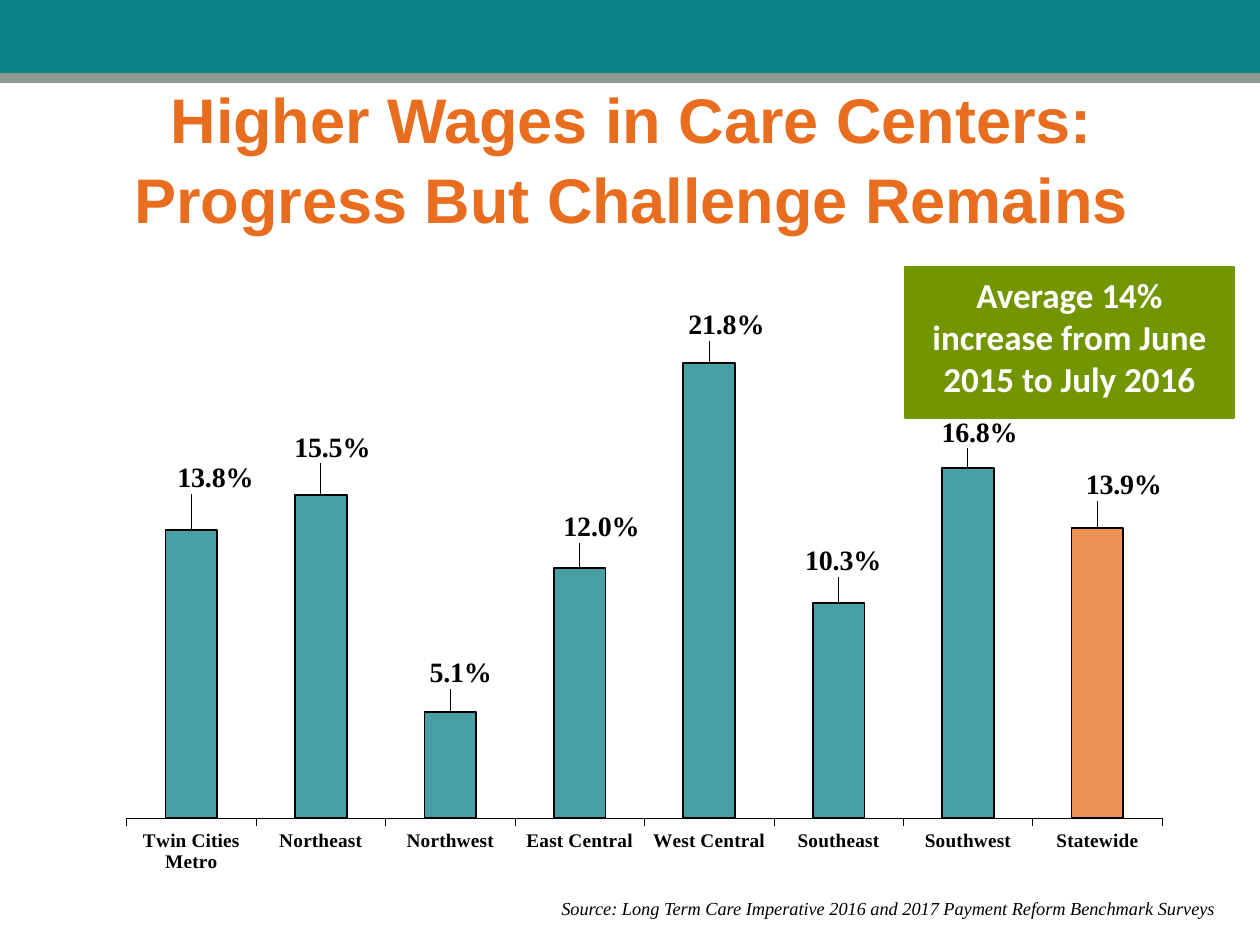
from lxml import etree
from pptx import Presentation
from pptx.chart.data import CategoryChartData
from pptx.dml.color import RGBColor
from pptx.enum.chart import XL_CHART_TYPE as ChartType
from pptx.enum.chart import XL_LABEL_POSITION as LabelPosition
from pptx.enum.chart import XL_TICK_LABEL_POSITION as TickLabelPosition
from pptx.enum.chart import XL_TICK_MARK as TickMark
from pptx.enum.shapes import MSO_SHAPE as Shape
from pptx.enum.text import MSO_ANCHOR as Anchor
from pptx.enum.text import MSO_AUTO_SIZE as AutoSize
from pptx.enum.text import PP_ALIGN as Align
from pptx.oxml.ns import qn
from pptx.util import Emu, Pt

PX_PER_INCH = 126
COLORS = {
    "teal": "0B8187",
    "gray": "8B9B92",
    "orange": "E86D1F",
    "green": "739600",
    "black": "000000",
    "white": "FFFFFF",
}
SERIF = "Times New Roman"
WAGE_INCREASES = {
    "Twin Cities Metro": 0.138,
    "Northeast": 0.155,
    "Northwest": 0.051,
    "East Central": 0.12,
    "West Central": 0.218,
    "Southeast": 0.103,
    "Southwest": 0.168,
    "Statewide": 0.139,
}
LABEL_OFFSETS = [(24, -31), (12, -26), (10, -18), (22, -20),
                 (17, -17), (5, -21), (11, -14), (26, -22)]


def px(length):
    """Turn pixels into EMU."""
    return Emu(round(length * 914400 / PX_PER_INCH))


def color(name):
    """Look up a named colour."""
    return RGBColor.from_string(COLORS[name])


def style_font(font, size, name=SERIF, fill="black", bold=False, italic=False):
    """Apply the given format to a font."""
    font.size, font.name = Pt(size), name
    font.bold, font.italic = bold, italic
    font.color.rgb = color(fill)


def write_text(frame, text, align=Align.LEFT, spacing=None, **font_format):
    """Write one formatted paragraph into a text frame."""
    paragraph = frame.paragraphs[0]
    paragraph.alignment = align
    paragraph.line_spacing = spacing
    run = paragraph.add_run()
    run.text = text
    style_font(run.font, **font_format)


def add_rectangle(slide, box, fill):
    """Add a plain filled rectangle."""
    shape = slide.shapes.add_shape(Shape.RECTANGLE, *map(px, box))
    shape.shadow.inherit = False
    shape.fill.solid()
    shape.fill.fore_color.rgb = color(fill)
    shape.line.fill.background()
    return shape


def add_header(slide, box):
    """Place the teal band with its gray strip below."""
    left, top, width, height = box
    strip = 10
    add_rectangle(slide, (left, top, width, height - strip), "teal")
    add_rectangle(slide, (left, top + height - strip, width, strip), "gray")


def place_title(slide, box, text):
    """Move and fill the title placeholder."""
    title = slide.shapes.title
    title.left, title.top, title.width, title.height = map(px, box)
    frame = title.text_frame
    frame.word_wrap = True
    frame.auto_size = AutoSize.NONE
    frame.vertical_anchor = Anchor.MIDDLE
    write_text(frame, text, align=Align.CENTER, spacing=1.05,
               size=36, name="Arial", fill="orange", bold=True)


def add_layout(parent, index, **values):
    """Insert a manual chart layout with the given settings."""
    layout = etree.Element(qn("c:layout"))
    manual = etree.SubElement(layout, qn("c:manualLayout"))
    for tag, value in values.items():
        etree.SubElement(manual, qn(f"c:{tag}")).set("val", str(value))
    parent.insert(index, layout)


def paint_bar(bar_format, fill):
    """Give bars a translucent fill and a black outline."""
    bar_format.fill.solid()
    bar_format.fill.fore_color.rgb = color(fill)
    for shade in bar_format.fill._xPr.iter(qn("a:srgbClr")):
        etree.SubElement(shade, qn("a:alpha")).set("val", "75000")
    bar_format.line.color.rgb = color("black")
    bar_format.line.width = Pt(1)


def add_wage_chart(slide, box):
    """Place the column chart of wage increases by region."""
    data = CategoryChartData(number_format="0.0%")
    data.categories = list(WAGE_INCREASES)
    data.add_series("Series 1", list(WAGE_INCREASES.values()))
    chart = slide.shapes.add_chart(
        ChartType.COLUMN_CLUSTERED, *map(px, box), data).chart
    chart.has_legend = chart.has_title = False
    style_font(chart.font, 18, bold=True)

    value_axis = chart.value_axis
    value_axis.minimum_scale, value_axis.maximum_scale = 0, 0.25
    value_axis.major_unit = 0.05
    value_axis.has_major_gridlines = False
    value_axis.visible = False

    category_axis = chart.category_axis
    category_axis.major_tick_mark = TickMark.OUTSIDE
    category_axis.tick_label_position = TickLabelPosition.LOW
    category_axis.format.line.color.rgb = color("black")
    category_axis.format.line.width = Pt(0.25)
    style_font(category_axis.tick_labels.font, 11, bold=True)

    plot = chart.plots[0]
    plot.gap_width = 150
    plot.vary_by_categories = False
    series = plot.series[0]
    paint_bar(series.format, "teal")
    paint_bar(series.points[len(WAGE_INCREASES) - 1].format, "orange")

    labels = series.data_labels
    labels.show_value = True
    labels.number_format, labels.number_format_is_linked = "0.0%", False
    style_font(labels.font, 16, bold=True)
    for index, (right, down) in enumerate(LABEL_OFFSETS):
        label = series.points[index].data_label
        style_font(label.font, 16, bold=True)
        label.position = LabelPosition.OUTSIDE_END
        element = labels._element.find(f"{qn('c:dLbl')}[{index + 1}]")
        add_layout(element, 1, x=round(right / box[2], 3), y=round(down / box[3], 3))

    plot_area = chart._chartSpace.chart.plotArea
    for old_layout in plot_area.findall(qn("c:layout")):
        plot_area.remove(old_layout)
    add_layout(plot_area, 0, layoutTarget="inner", xMode="edge", yMode="edge",
               x=0.082, y=0.026, w=0.906, h=0.822)


def add_source(slide, box, text):
    """Place the source line on one unwrapped line."""
    frame = slide.shapes.add_textbox(*map(px, box)).text_frame
    frame.word_wrap = False
    frame.auto_size = AutoSize.SHAPE_TO_FIT_TEXT
    write_text(frame, text, size=10.5, italic=True)


def add_callout(slide, box, text):
    """Place the green callout."""
    shape = add_rectangle(slide, box, "green")
    shape.line.color.rgb = color("green")
    shape.line.width = Pt(0.75)
    frame = shape.text_frame
    frame.word_wrap = True
    frame.vertical_anchor = Anchor.TOP
    write_text(frame, text, align=Align.CENTER,
               size=20, name="Calibri", fill="white", bold=True)


def main():
    """Build and save the slide."""
    presentation = Presentation()
    presentation.slide_width, presentation.slide_height = px(1260), px(945)
    slide = presentation.slides.add_slide(presentation.slide_layouts[5])
    add_header(slide, (0, 0, 1260, 83))
    place_title(slide, (33, 87, 1197, 139),
                "Higher Wages in Care Centers: Progress But Challenge Remains")
    add_wage_chart(slide, (33, 280, 1143, 635))
    add_source(slide, (549, 891, 692, 35),
               "Source: Long Term Care Imperative 2016 and 2017 Payment Reform Benchmark Surveys")
    add_callout(slide, (905, 267, 329, 151),
                "Average 14% increase from June 2015 to July 2016")
    presentation.save("out.pptx")


if __name__ == "__main__":
    main()
